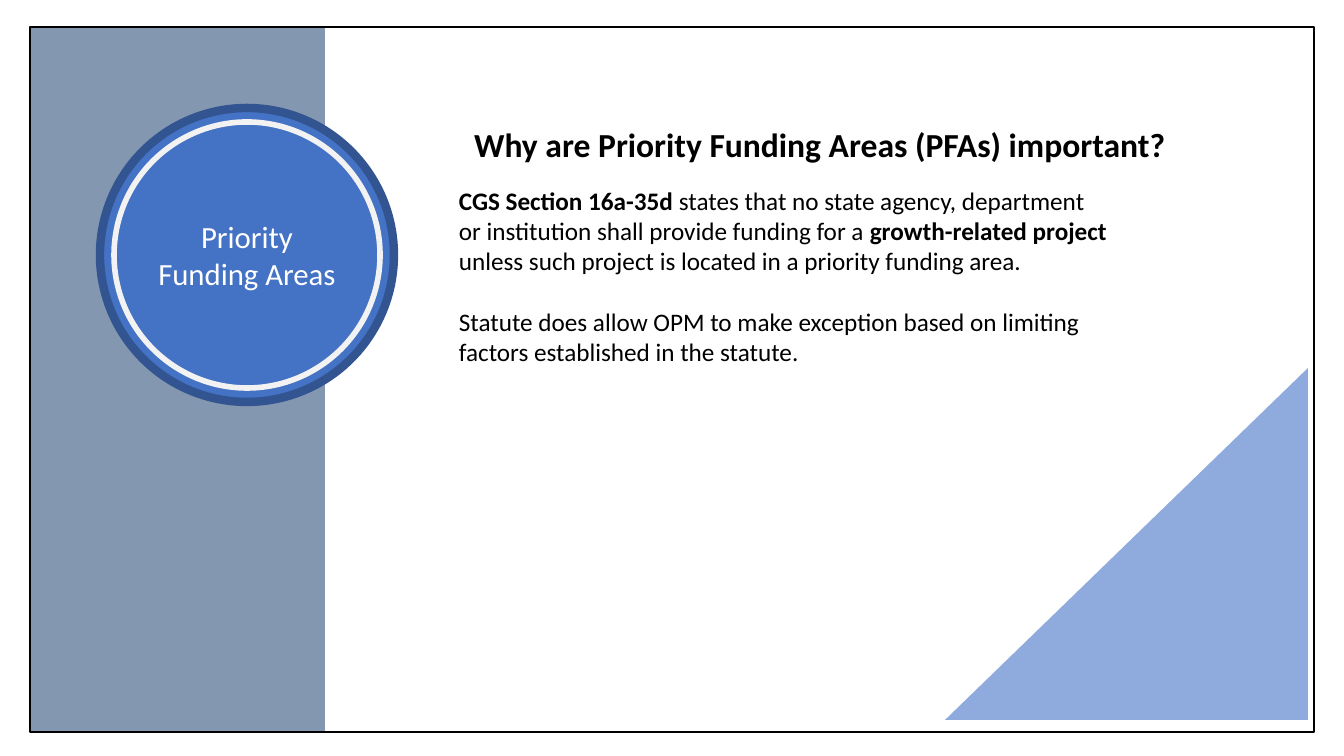
from dataclasses import dataclass

from pptx import Presentation
from pptx.dml.color import RGBColor
from pptx.enum.shapes import MSO_SHAPE as Shape
from pptx.enum.text import MSO_ANCHOR as Anchor, MSO_AUTO_SIZE as AutoSize, PP_ALIGN as Align
from pptx.util import Emu, Pt

EMU_PER_PX = 914400 / 100.8


@dataclass(frozen=True)
class Theme:
    font: str = "Calibri"
    heading_size: int = 24
    label_size: int = 22
    body_size: int = 18
    black: str = "000000"
    white: str = "FFFFFF"
    panel: str = "8497B0"
    corner: str = "8FAADC"
    badge: str = "4472C4"
    badge_edge: str = "325491"
    ring: str = "F2F2F2"


THEME = Theme()


def px(length):
    return Emu(round(length * EMU_PER_PX))


def color(value):
    return RGBColor.from_string(value)


def add_figure(slide, kind, box, fill=None, line=None, line_width=1, flip=False):
    """Add a preset shape; box is left, top, width, height in px."""
    shape = slide.shapes.add_shape(kind, *map(px, box))
    shape.shadow.inherit = False
    if fill:
        shape.fill.solid()
        shape.fill.fore_color.rgb = color(fill)
    else:
        shape.fill.background()
    if line:
        shape.line.color.rgb = color(line)
        shape.line.width = Pt(line_width)
    else:
        shape.line.fill.background()
    if flip:
        shape.element.spPr.xfrm.set("flipH", "1")
    return shape


def write_text(shape, paragraphs, size, ink=THEME.black, align=Align.LEFT,
               anchor=Anchor.TOP, gap=0):
    """Fill a shape with paragraphs, each a list of (text, bold) runs."""
    frame = shape.text_frame
    frame.word_wrap = True
    frame.auto_size = AutoSize.NONE
    frame.vertical_anchor = anchor
    for index, runs in enumerate(paragraphs):
        paragraph = frame.add_paragraph() if index else frame.paragraphs[0]
        paragraph.alignment = align
        paragraph.line_spacing = 1.0
        paragraph.space_before = Pt(gap if index else 0)
        for text, bold in runs:
            run = paragraph.add_run()
            run.text = text
            run.font.name = THEME.font
            run.font.size = Pt(size)
            run.font.bold = bold
            run.font.color.rgb = color(ink)


def add_badge(slide, label):
    badge = add_figure(slide, Shape.OVAL, (100, 108, 294, 294), fill=THEME.badge,
                       line=THEME.badge_edge, line_width=6)
    write_text(badge, [[(label, False)]], THEME.label_size, ink=THEME.white,
               align=Align.CENTER, anchor=Anchor.MIDDLE)
    add_figure(slide, Shape.OVAL, (114, 122, 266, 266), line=THEME.ring, line_width=4)


def add_heading(slide, text):
    title = slide.shapes.title
    title.left, title.top, title.width, title.height = map(px, (464, 87, 767, 114))
    write_text(title, [[(text, True)]], THEME.heading_size, anchor=Anchor.MIDDLE)


def add_body(slide, paragraphs):
    body = slide.shapes.add_textbox(*map(px, (449, 180, 671, 193)))
    write_text(body, paragraphs, THEME.body_size, gap=22)


def main():
    presentation = Presentation()
    presentation.slide_width, presentation.slide_height = px(1344), px(756)
    slide = presentation.slides.add_slide(presentation.slide_layouts[5])

    # Background decoration
    add_figure(slide, Shape.RIGHT_TRIANGLE, (945, 368, 363, 352), fill=THEME.corner, flip=True)
    add_figure(slide, Shape.RECTANGLE, (29, 27, 296, 705), fill=THEME.panel)

    # Round topic badge and slide frame
    add_badge(slide, "Priority Funding Areas")
    add_figure(slide, Shape.RECTANGLE, (30, 27, 1284, 705), line=THEME.black, line_width=1.5)

    # Heading and explanation
    add_heading(slide, "Why are Priority Funding Areas (PFAs) important?")
    add_body(slide, [
        [("CGS Section 16a-35d ", True),
         ("states that no state agency, department or institution shall provide "
          "funding for a ", False),
         ("growth-related project ", True),
         ("unless such project is located in a priority funding area.", False)],
        [("Statute does allow OPM to make exception based on limiting factors "
          "established in the statute.", False)],
    ])

    presentation.save("out.pptx")


if __name__ == "__main__":
    main()
